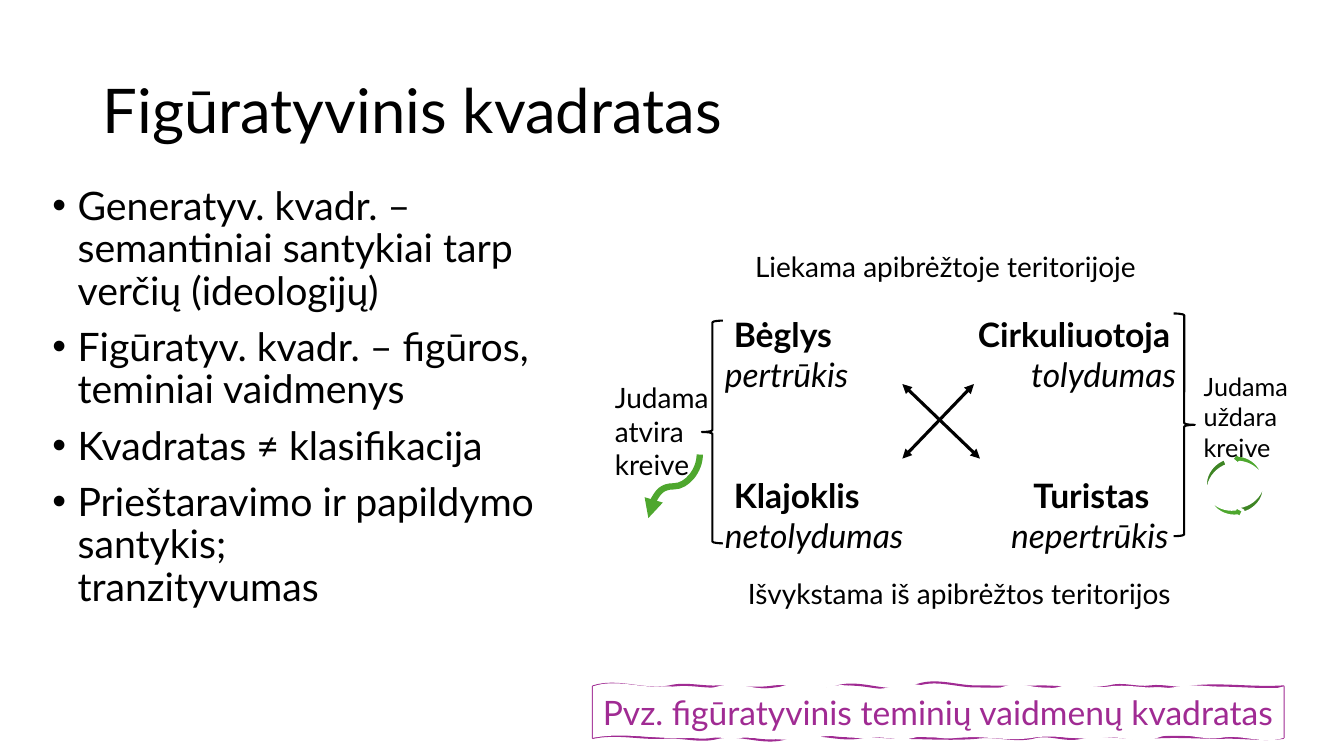
from lxml import etree
from pptx import Presentation
from pptx.dml.color import RGBColor
from pptx.enum.shapes import MSO_CONNECTOR, MSO_SHAPE
from pptx.enum.text import MSO_ANCHOR, MSO_AUTO_SIZE, PP_ALIGN
from pptx.oxml.ns import qn
from pptx.util import Inches, Pt

STRAIGHT, CURVE = MSO_CONNECTOR.STRAIGHT, MSO_CONNECTOR.CURVE
BRACE, CURVED_ARROW = MSO_SHAPE.RIGHT_BRACE, MSO_SHAPE.CURVED_UP_ARROW
TOP, MIDDLE = MSO_ANCHOR.TOP, MSO_ANCHOR.MIDDLE
LEFT = PP_ALIGN.LEFT
NO_FIT = MSO_AUTO_SIZE.NONE

FONT = "Lato"
COLORS = {"text": "000000", "paper": "FFFFFF", "green": "4EA72E", "purple": "A02B93"}

BULLETS = [
    "Generatyv. kvadr. – semantiniai santykiai tarp verčių (ideologijų)",
    "Figūratyv. kvadr. – figūros, teminiai vaidmenys",
    "Kvadratas ≠ klasifikacija",
    "Prieštaravimo ir papildymo santykis;\vtranzityvumas",
]
UPPER_ROW, LOWER_ROW = 3.06, 4.66
CORNERS = [
    ("Bėglys", 7.28, "pertrūkis", 7.19, UPPER_ROW),
    ("Cirkuliuotoja", 9.7, "tolydumas", 10.23, UPPER_ROW),
    ("Klajoklis", 7.28, "netolydumas", 7.19, LOWER_ROW),
    ("Turistas", 10.25, "nepertrūkis", 10.03, LOWER_ROW),
]
LABELS = [
    ("Judama atvira kreive", (6, 3.72, 1.17, 1.11), 20),
    ("Judama uždara kreive", (11.84, 3.63, 1.05, 1.01), 18),
    ("Liekama apibrėžtoje teritorijoje", (7.39, 2.42, 5.25, 0.44), 20),
    ("Išvykstama iš apibrėžtos teritorijos", (7.32, 5.67, 5.25, 0.44), 20),
]

FRAME_LEFT, FRAME_TOP, FRAME_WIDTH, FRAME_HEIGHT = 5.88, 6.81, 6.85, 0.51
STROKE_TOP = [
    (0.76, -0.08, 0.05), (1.24, -0.04, 0.01), (1.8, 0, 0.03), (2.42, -0.02, 0.08),
    (3.18, -0.07, 0.09), (3.8, -0.09, 0), (4.43, 0, 0.01), (5.12, 0, 0.04),
    (5.53, -0.04, 0.02), (5.95, -0.02, 0.04), (FRAME_WIDTH, -0.03, 0.02),
]
STROKE_BOTTOM = [
    (6.23, 0.03, -0.01), (5.53, 0, -0.02), (4.84, 0.02, -0.05), (4.36, 0.04, -0.05),
    (3.8, 0.04, -0.03), (3.04, 0.02, 0), (2.63, 0, -0.03), (1.93, 0.03, -0.08),
    (1.24, 0.08, -0.05), (0.69, 0.05, -0.02), (0, 0.01, -0.05),
]
FILL_TOP = [
    (0.69, -0.08, 0.02), (1.24, -0.01, 0.06), (1.87, -0.06, 0.07), (2.35, -0.06, 0.06),
    (2.97, -0.05, 0.07), (3.46, -0.07, 0.02), (4.08, -0.01, 0.07), (4.64, -0.06, 0.06),
    (5.12, -0.05, 0.03), (5.81, -0.03, 0.05), (FRAME_WIDTH, -0.05, 0.11),
]
FILL_BOTTOM = [
    (6.23, 0.07, -0.04), (5.6, 0.03, -0.08), (5.05, 0.07, -0.03), (4.36, 0.03, -0.04),
    (3.6, 0.04, -0.03), (3.18, 0.03, -0.05), (2.76, 0.04, -0.02), (2.21, 0.02, -0.05),
    (1.45, 0.05, -0.01), (0.96, 0.01, -0.02), (0, 0.02, -0.06),
]


def color(name):
    return RGBColor.from_string(COLORS[name])


def box(bounds):
    return [Inches(value) for value in bounds]


def format_runs(paragraph, size, color_name="text", bold=False, italic=False):
    paragraph.alignment = LEFT
    for run in paragraph.runs:
        font = run.font
        font.name, font.size = FONT, Pt(size)
        font.bold, font.italic = bold, italic
        font.color.rgb = color(color_name)


def fill_placeholder(shape, bounds, lines, size, anchor):
    shape.left, shape.top, shape.width, shape.height = box(bounds)
    frame = shape.text_frame
    frame.text = "\n".join(lines)
    frame.auto_size, frame.vertical_anchor = NO_FIT, anchor
    for paragraph in frame.paragraphs:
        paragraph.line_spacing = 0.9
        format_runs(paragraph, size)


def add_label(slide, text, bounds, size):
    frame = slide.shapes.add_textbox(*box(bounds)).text_frame
    frame.word_wrap, frame.vertical_anchor = True, MIDDLE
    frame.text = text
    format_runs(frame.paragraphs[0], size)
    return frame


def add_corner(slide, role, role_left, trait, trait_left, top):
    left = min(role_left, trait_left)
    frame = add_label(slide, role, (left - 0.1, top, 2.2, 0.9), 24)
    frame.add_paragraph().text = trait
    for paragraph, start, is_role in zip(
            frame.paragraphs, (role_left, trait_left), (True, False)):
        format_runs(paragraph, 24, bold=is_role, italic=not is_role)
        paragraph._p.get_or_add_pPr().set("marL", str(Inches(start - left)))


def add_arrow(slide, kind, start, end, color_name, width, ends):
    arrow = slide.shapes.add_connector(kind, *box(start + end))
    arrow.line.color.rgb = color(color_name)
    arrow.line.width = Pt(width)
    for end_name in ends:
        etree.SubElement(arrow.line._get_or_add_ln(), qn("a:" + end_name), type="triangle")
    etree.SubElement(arrow.element.spPr, qn("a:effectLst"))
    return arrow


def style_shape(shape, line_color, width, fill=None):
    shape.shadow.inherit = False
    if fill:
        shape.fill.solid()
        shape.fill.fore_color.rgb = color(fill)
    else:
        shape.fill.background()
    shape.line.color.rgb = color(line_color)
    shape.line.width = Pt(width)


def add_preset(slide, kind, bounds, rotation, line_color, width, fill=None):
    shape = slide.shapes.add_shape(kind, *box(bounds))
    shape.rotation = rotation
    style_shape(shape, line_color, width, fill)


def add_point(parent, x, y):
    etree.SubElement(parent, qn("a:pt"), x=str(Inches(x)), y=str(Inches(y)))


def add_wavy_edge(contour, start, y, waves):
    for end, first, second in waves:
        curve = etree.SubElement(contour, qn("a:cubicBezTo"))
        third = (end - start) / 3
        add_point(curve, start + third, y + first)
        add_point(curve, end - third, y + second)
        add_point(curve, end, y)
        start = end


def add_contour(contours, top, bottom, **settings):
    contour = etree.SubElement(contours, qn("a:path"), w=str(Inches(FRAME_WIDTH)),
                               h=str(Inches(FRAME_HEIGHT)), **settings)
    add_point(etree.SubElement(contour, qn("a:moveTo")), 0, 0)
    add_wavy_edge(contour, 0, 0, top)
    add_point(etree.SubElement(contour, qn("a:lnTo")), FRAME_WIDTH, FRAME_HEIGHT)
    add_wavy_edge(contour, FRAME_WIDTH, FRAME_HEIGHT, bottom)
    etree.SubElement(contour, qn("a:close"))


def add_sketched_caption(slide, text):
    right, bottom = FRAME_LEFT + FRAME_WIDTH, FRAME_TOP + FRAME_HEIGHT
    builder = slide.shapes.build_freeform(Inches(FRAME_LEFT), Inches(FRAME_TOP))
    builder.add_line_segments(
        [box(point) for point in ((right, FRAME_TOP), (right, bottom), (FRAME_LEFT, bottom))])
    shape = builder.convert_to_shape()
    contours = shape.element.find(".//" + qn("a:pathLst"))
    contours.remove(contours[0])
    add_contour(contours, STROKE_TOP, STROKE_BOTTOM, fill="none")
    add_contour(contours, FILL_TOP, FILL_BOTTOM, stroke="0")
    style_shape(shape, "purple", 1.5, "paper")
    frame = shape.text_frame
    frame.word_wrap, frame.vertical_anchor = True, TOP
    frame.text = text
    format_runs(frame.paragraphs[0], 24, "purple")


def main():
    presentation = Presentation()
    presentation.slide_width, presentation.slide_height = Inches(13.33), Inches(7.5)
    slide = presentation.slides.add_slide(presentation.slide_layouts[1])
    title, body = slide.placeholders
    fill_placeholder(title, (0.92, 0.4, 11.5, 1.45), ["Figūratyvinis kvadratas"], 44, MIDDLE)
    fill_placeholder(body, (0.42, 1.8, 5.75, 5.07), BULLETS, 28, TOP)
    for paragraph in body.text_frame.paragraphs:
        paragraph.space_before = Pt(10)
        properties = paragraph._p.get_or_add_pPr()
        properties.set("marL", str(Inches(0.25)))
        properties.set("indent", str(-Inches(0.25)))
        etree.SubElement(properties, qn("a:buChar"), char="•")

    add_sketched_caption(slide, "Pvz. figūratyvinis teminių vaidmenų kvadratas")
    for corner in CORNERS:
        add_corner(slide, *corner)
    both_ends = ("headEnd", "tailEnd")
    add_arrow(slide, STRAIGHT, (9.66, 3.81), (8.95, 4.55), "text", 2.25, both_ends)
    add_arrow(slide, STRAIGHT, (8.95, 3.81), (9.72, 4.55), "text", 2.25, both_ends)
    open_curve = add_arrow(slide, CURVE, (6.37, 4.57), (7, 5.08), "green", 4.5, ("tailEnd",))
    open_curve.element.spPr.xfrm.set("rot", str(90 * 60000))
    for left, top, rotation in ((11.83, 4.74, 70.1), (12.08, 4.63, 261.7), (11.81, 4.75, 70.1)):
        add_preset(slide, CURVED_ARROW, (left, top, 0.62, 0.28), rotation, "paper", 2, "green")
    for label in LABELS:
        add_label(slide, *label)
    for left, top, rotation in ((6.96, 3.18, 180), (11.64, 3.11, 0)):
        add_preset(slide, BRACE, (left, top, 0.21, 2.21), rotation, "text", 1.5)
    presentation.save("out.pptx")


if __name__ == "__main__":
    main()
